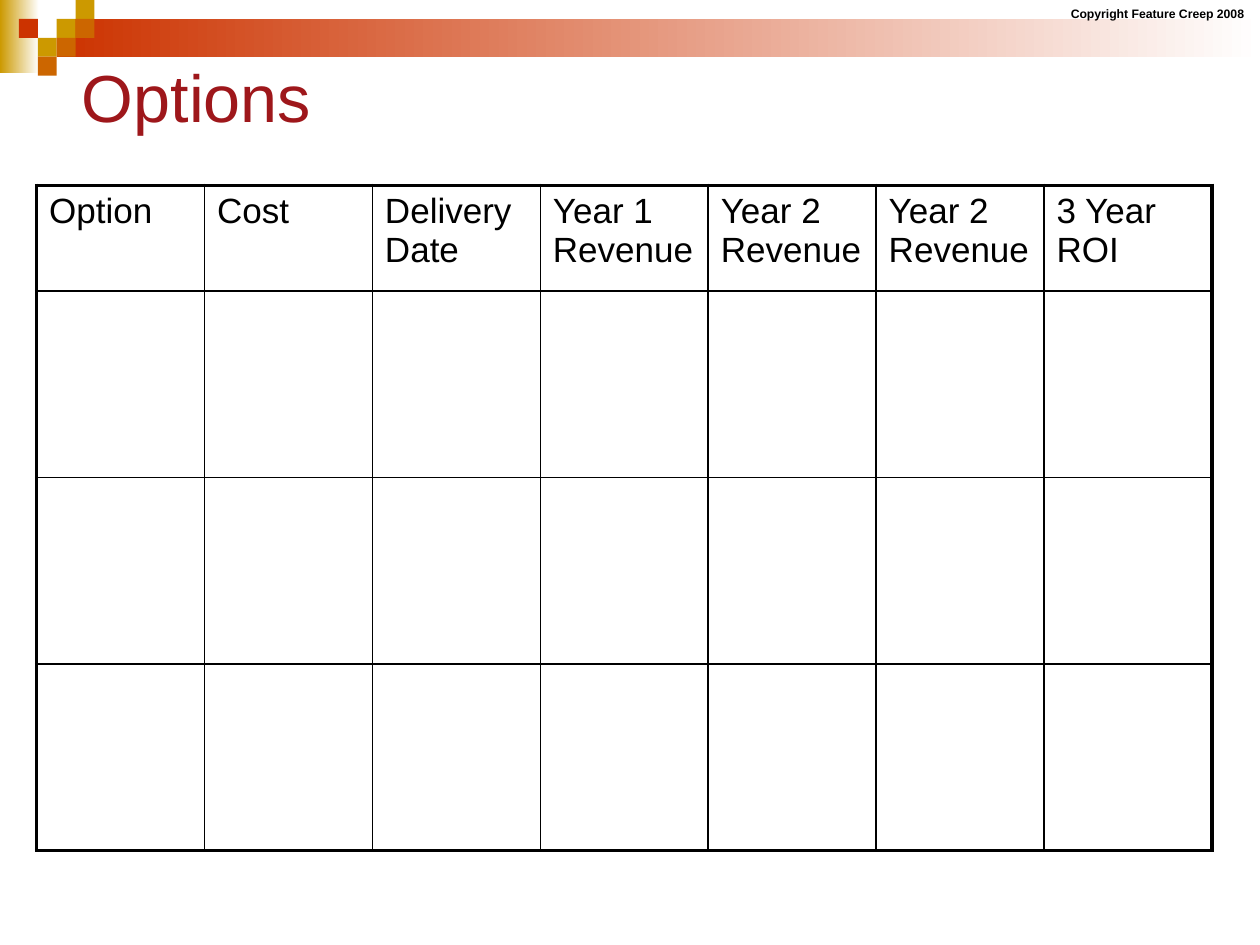
from lxml.etree import SubElement as Sub
from pptx import Presentation
from pptx.dml.color import RGBColor
from pptx.enum.shapes import MSO_SHAPE as Shape
from pptx.enum.text import MSO_ANCHOR as Anchor, MSO_AUTO_SIZE as Auto, PP_ALIGN as Align
from pptx.oxml.ns import qn
from pptx.util import Inches, Pt


def tint(code):
    """Turn a hex string into a colour."""
    return RGBColor.from_string(code)


class Deck:
    """Hold the style and the current slide."""

    font = "Arial"
    ink, red, gold, rust, wine = "000000", "CC3300", "CC9900", "CC6600", "9E171B"
    thin, thick = 1, 2.25

    def __init__(self):
        """Open a deck with one title-only slide."""
        self.deck = Presentation()
        self.deck.slide_width, self.deck.slide_height = Inches(10), Inches(7.5)
        self.slide = self.deck.slides.add_slide(self.deck.slide_layouts[5])

    def style(self, frame, text, size, color, bold=False):
        """Set and format the text of a frame."""
        frame.text = text
        para = frame.paragraphs[0]
        para.alignment = Align.LEFT
        for run in para.runs:
            font = run.font
            font.name, font.size, font.bold = self.font, Pt(size), bold
            font.color.rgb = tint(color)

    def block(self, box, color, fade=False):
        """Draw a rectangle, plain or fading to white."""
        item = self.slide.shapes.add_shape(Shape.RECTANGLE, *map(Inches, box))
        item.shadow.inherit = False
        item.line.fill.background()
        if fade:
            item.fill.gradient()
            item.fill.gradient_angle = 0
            for stop, code in zip(item.fill.gradient_stops, (color, "FFFFFF")):
                stop.color.rgb = tint(code)
        else:
            item.fill.solid()
            item.fill.fore_color.rgb = tint(color)

    def label(self, box, text, size):
        """Add a bold line of text that does not wrap."""
        frame = self.slide.shapes.add_textbox(*map(Inches, box)).text_frame
        self.style(frame, text, size, self.ink, True)
        frame.word_wrap, frame.auto_size = False, Auto.SHAPE_TO_FIT_TEXT

    def title(self, box, text, size):
        """Place and format the title."""
        item = self.slide.shapes.title
        item.left, item.top, item.width, item.height = map(Inches, box)
        self.style(item.text_frame, text, size, self.wine)
        item.text_frame.auto_size = Auto.NONE
        item.text_frame.vertical_anchor = Anchor.MIDDLE

    def edge(self, cell, side, width):
        """Draw one border of a cell."""
        props = cell._tc.get_or_add_tcPr()
        line = Sub(props, qn(f"a:ln{side}"), w=str(Pt(width)))
        Sub(Sub(line, qn("a:solidFill")), qn("a:srgbClr"), val=self.ink)

    def table(self, box, heads, rows, size):
        """Add a ruled table with a heavy frame."""
        count, last = len(heads), len(rows) - 1
        table = self.slide.shapes.add_table(len(rows), count, *map(Inches, box)).table
        table.first_row = table.horz_banding = False
        for col in table.columns:
            col.width = Inches(box[2] / count)
        for r, high in enumerate(rows):
            table.rows[r].height = Inches(high)
            for c, head in enumerate(heads):
                cell = table.cell(r, c)
                outer = {"L": c == 0, "R": c == count - 1, "T": r == 0, "B": r == last}
                for side, heavy in outer.items():
                    self.edge(cell, side, self.thick if heavy else self.thin)
                cell.fill.background()
                if r == 0:
                    self.style(cell.text_frame, head, size, self.ink)

    def save(self):
        """Save the deck."""
        self.deck.save("out.pptx")


def main():
    """Build the options slide."""
    deck = Deck()
    deck.block((0, 0, 0.31, 0.58), deck.gold, True)
    deck.block((0.45, 0.15, 9.55, 0.3), deck.red, True)
    side = 0.15
    tiles = [
        (3, 1, deck.gold), (4, 0, deck.gold), (4, 1, deck.rust), (2, 2, deck.gold),
        (1, 1, deck.red), (3, 2, deck.rust), (2, 3, deck.rust),
    ]
    for col, row, color in tiles:
        deck.block((col * side, row * side, side, side), color)
    deck.label((8.4, 0, 1.6, 0.22), "Copyright Feature Creep 2008", 7)
    deck.title((0.55, 0.4, 9, 0.73), "Options", 38)
    heads = ["Option", "Cost", "Delivery Date", "Year 1 Revenue",
             "Year 2 Revenue", "Year 2 Revenue", "3 Year ROI"]
    deck.table((0.29, 1.47, 9.33, 5.28), heads, [0.84] + [1.48] * 3, 20)
    deck.save()


if __name__ == "__main__":
    main()
